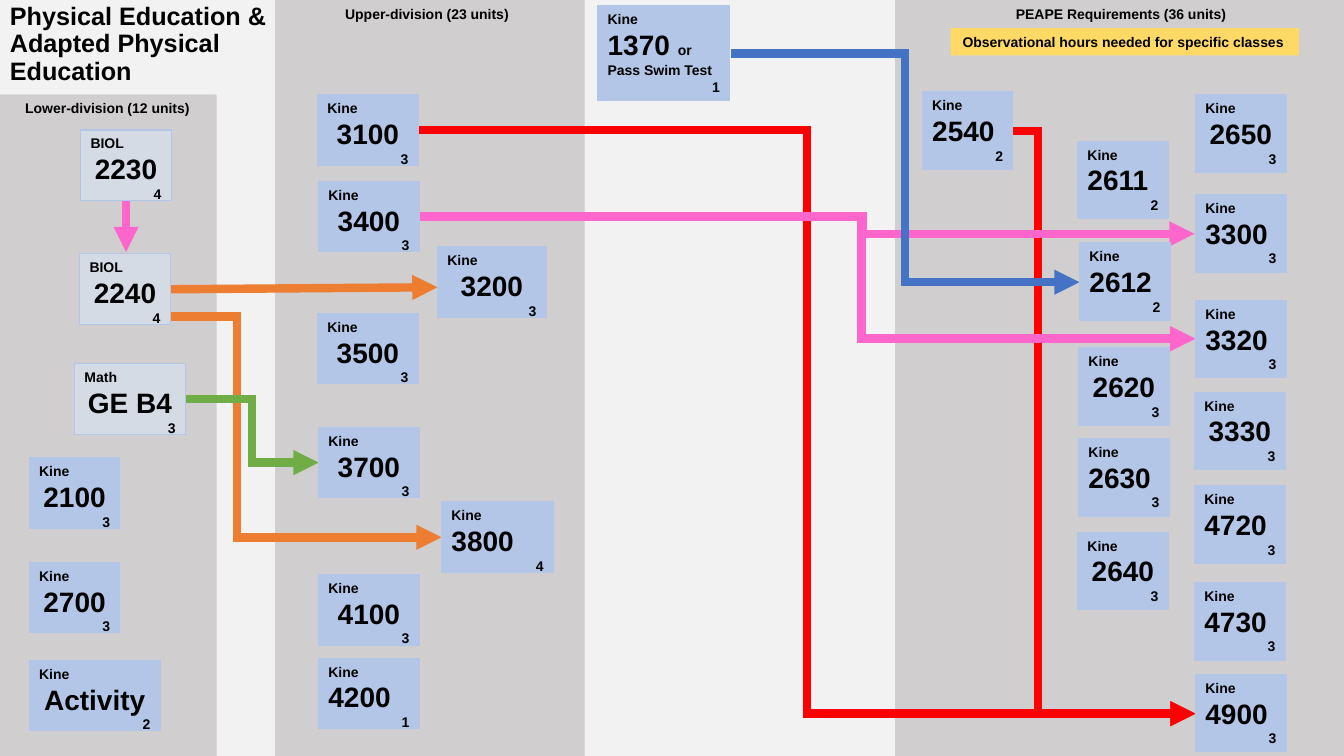
from dataclasses import dataclass

from lxml import etree
from pptx import Presentation
from pptx.dml.color import RGBColor
from pptx.enum.shapes import MSO_CONNECTOR, MSO_SHAPE
from pptx.enum.text import MSO_ANCHOR, MSO_AUTO_SIZE, PP_ALIGN
from pptx.oxml.ns import qn
from pptx.util import Inches, Pt

RECTANGLE = MSO_SHAPE.RECTANGLE
STRAIGHT, ELBOW = MSO_CONNECTOR.STRAIGHT, MSO_CONNECTOR.ELBOW
LEFT, CENTER, RIGHT = PP_ALIGN.LEFT, PP_ALIGN.CENTER, PP_ALIGN.RIGHT
TOP, MIDDLE = MSO_ANCHOR.TOP, MSO_ANCHOR.MIDDLE
GROW = MSO_AUTO_SIZE.SHAPE_TO_FIT_TEXT

FONT = "Arial"
GRID = 0.1
COLUMNS, ROWS = 133.33, 75
SMALL, LARGE, TITLE = 10, 20, 18
COLORS = {
    "background": "F2F2F2",
    "panel": "D0CECE",
    "kine": "B3C6E7",
    "support": "D5DBE5",
    "note": "FFD966",
    "text": "000000",
    "pink": "FF66CC",
    "orange": "ED7D31",
    "green": "70AD47",
    "red": "FF0000",
    "blue": "4472C4",
}


@dataclass
class Area:
    column: float
    row: float
    width: float
    height: float
    fill: str = "panel"
    label: str = ""


@dataclass
class Course:
    number: str
    units: str
    column: float
    row: float
    width: float = 9
    height: float = 7.7
    align: PP_ALIGN = LEFT
    subject: str = "Kine"
    fill: str = "kine"
    option: str = ""


@dataclass
class Prerequisite:
    color: str
    start: tuple[float, float]
    end: tuple[float, float]
    turn: float | None = None


PANELS = [
    Area(0, 9.4, 21.5, 65.6),
    Area(88.8, 0, 44.53, 75),
    Area(27.3, 0, 30.7, 75),
    Area(0, 9.4, 21.3, 2.7, label="Lower-division (12 units)"),
    Area(28.3, 0.1, 28.1, 2.7, label="Upper-division (23 units)"),
    Area(89.1, 0.1, 44.2, 2.7, label="PEAPE Requirements (36 units)"),
    Area(94.3, 2.8, 34.6, 2.7, "note", "Observational hours needed for specific classes "),
]

PREREQUISITES = [
    Prerequisite("pink", (12.5, 19.9), (12.5, 25)),
    Prerequisite("orange", (16.4, 31.4), (43.8, 53.3), 23.5),
    Prerequisite("green", (18.4, 39.6), (31.6, 45.9), 25),
    Prerequisite("red", (100.5, 13), (118.6, 70.8), 103),
    Prerequisite("red", (41.5, 12.9), (118.6, 70.8), 80.05),
    Prerequisite("pink", (41.6, 21.5), (118.5, 23.2), 85.55),
    Prerequisite("blue", (72.5, 5.3), (107.1, 28), 89.8),
    Prerequisite("pink", (41.6, 21.5), (118.6, 33.6), 85.5),
    Prerequisite("orange", (16.9, 28.7), (43.4, 28.5)),
]

COURSES = [
    Course("2230", "4", 8, 12.9, 9, 7, CENTER, "BIOL", "support"),
    Course("2240", "4", 7.9, 25.2, 9, 7, CENTER, "BIOL", "support"),
    Course("GE B4", "3", 7.4, 36.1, 11, 7, CENTER, "Math", "support"),
    Course("2100", "3", 2.9, 45.4, 9, 7, CENTER),
    Course("2700", "3", 2.9, 55.8, 9, 7, CENTER),
    Course("Activity", "2", 2.9, 65.5, 13, 7, CENTER),
    Course("3100", "3", 31.5, 9.4, 10, 7, CENTER),
    Course("3400", "3", 31.6, 18, 10, 7, CENTER),
    Course("3200", "3", 43.4, 24.5, 10.8, 7, CENTER),
    Course("3500", "3", 31.5, 31.1, 10, 7, CENTER),
    Course("3700", "3", 31.6, 42.4, 10, 7, CENTER),
    Course("3800", "4", 43.8, 49.8, 11.1, 7),
    Course("4100", "3", 31.6, 57, 10, 7, CENTER),
    Course("4200", "1", 31.6, 65.3, 10, 7),
    Course("1370 ", "1", 59.3, 0.6, 13.1, 9.4, option="or Pass Swim Test"),
    Course("2540", "2", 91.5, 9.1),
    Course("2611", "2", 106.9, 14),
    Course("2612", "2", 107.1, 24.1),
    Course("2620", "3", 107, 34.5, align=CENTER),
    Course("2630", "3", 107, 43.5),
    Course("2640", "3", 106.9, 52.8, align=CENTER),
    Course("2650", "3", 118.6, 9.4, align=CENTER),
    Course("3300", "3", 118.6, 19.3),
    Course("3320", "3", 118.6, 29.8),
    Course("3330", "3", 118.5, 38.9, align=CENTER),
    Course("4720", "3", 118.5, 48.2),
    Course("4730", "3", 118.5, 57.8),
    Course("4900", "3", 118.6, 66.9),
]


def cells(count: float) -> int:
    return Inches(count * GRID)


def color(name: str) -> RGBColor:
    return RGBColor.from_string(COLORS[name])


def add_run(paragraph, text: str, size: float) -> None:
    run = paragraph.add_run()
    run.text = text
    run.font.name = FONT
    run.font.size = Pt(size)
    run.font.bold = True
    run.font.color.rgb = color("text")


def write(frame, lines: list, anchor=TOP) -> None:
    frame.word_wrap = True
    frame.vertical_anchor = anchor
    for index, (align, runs) in enumerate(lines):
        paragraph = frame.add_paragraph() if index else frame.paragraphs[0]
        paragraph.alignment = align
        for text, size in runs:
            add_run(paragraph, text, size)


def draw_box(slide, box: Area | Course, lines: list, outlined: bool = False) -> None:
    rectangle = slide.shapes.add_shape(
        RECTANGLE, cells(box.column), cells(box.row), cells(box.width), cells(box.height))
    rectangle.shadow.inherit = False
    rectangle.fill.solid()
    rectangle.fill.fore_color.rgb = color(box.fill)
    if outlined:
        rectangle.line.color.rgb = color("kine")
        rectangle.line.width = Pt(0.75)
    else:
        rectangle.line.fill.background()
    if lines:
        write(rectangle.text_frame, lines)
        rectangle.text_frame.auto_size = GROW


def draw_area(slide, area: Area) -> None:
    draw_box(slide, area, [(CENTER, [(area.label, SMALL)])] if area.label else [])


def draw_course(slide, course: Course) -> None:
    heading = [(course.number, LARGE)]
    if course.option:
        heading.append((course.option, SMALL))
    draw_box(slide, course, [
        (LEFT, [(course.subject, SMALL)]),
        (course.align, heading),
        (RIGHT, [(course.units, SMALL)]),
    ], outlined=True)


def draw_prerequisite(slide, link: Prerequisite) -> None:
    kind = STRAIGHT if link.turn is None else ELBOW
    arrow = slide.shapes.add_connector(kind, *map(cells, link.start + link.end))
    arrow.line.color.rgb = color(link.color)
    arrow.line.width = Pt(6)
    properties = arrow.element.spPr
    etree.SubElement(properties, qn("a:effectLst"))
    outline = properties.find(qn("a:ln"))
    etree.SubElement(outline, qn("a:miter"), lim="800000")
    etree.SubElement(outline, qn("a:tailEnd"), type="triangle")
    if link.turn is not None:
        share = (link.turn - link.start[0]) / (link.end[0] - link.start[0])
        guides = properties.find(qn("a:prstGeom")).find(qn("a:avLst"))
        etree.SubElement(guides, qn("a:gd"), name="adj1", fmla=f"val {round(share * 100000)}")


def draw_title(slide) -> None:
    title = slide.shapes.add_textbox(cells(0), cells(0.1), cells(28.1), cells(8.7))
    text = "Physical Education & Adapted Physical Education"
    write(title.text_frame, [(LEFT, [(text, TITLE)])], MIDDLE)
    title.text_frame.paragraphs[0].line_spacing = 0.9


def main() -> None:
    deck = Presentation()
    deck.slide_width, deck.slide_height = cells(COLUMNS), cells(ROWS)
    slide = deck.slides.add_slide(deck.slide_layouts[6])
    slide.background.fill.solid()
    slide.background.fill.fore_color.rgb = color("background")
    for area in PANELS:
        draw_area(slide, area)
    draw_title(slide)
    for link in PREREQUISITES:
        draw_prerequisite(slide, link)
    for course in COURSES:
        draw_course(slide, course)
    deck.save("out.pptx")


if __name__ == "__main__":
    main()
